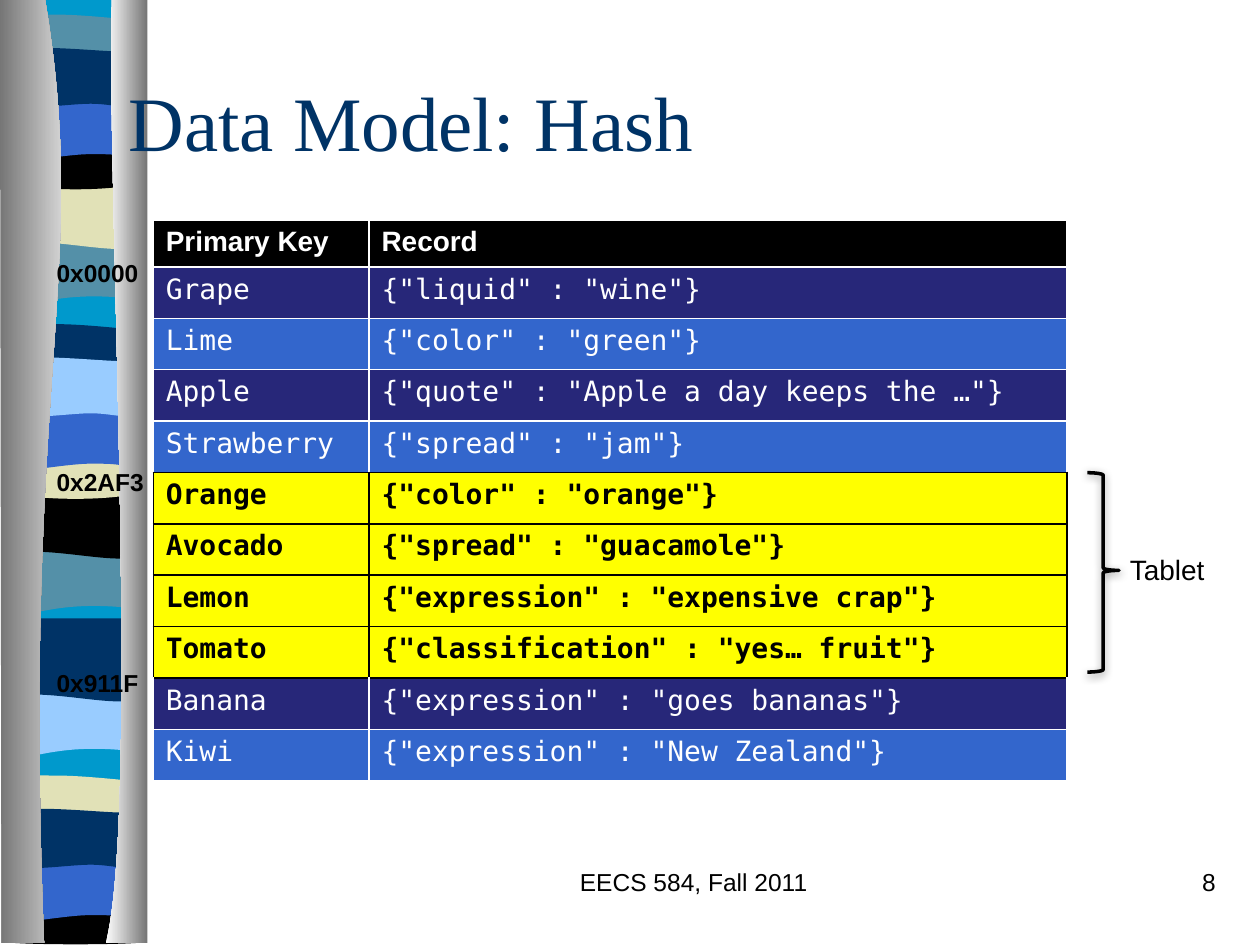
from dataclasses import dataclass

from lxml.etree import SubElement
from pptx import Presentation
from pptx.dml.color import RGBColor
from pptx.enum.shapes import MSO_SHAPE
from pptx.enum.text import MSO_ANCHOR, MSO_AUTO_SIZE, PP_ALIGN
from pptx.oxml.ns import qn
from pptx.util import Cm, Pt


@dataclass(frozen=True)
class Theme:
    navy: str = "003366"
    blue: str = "3366CC"
    sky: str = "99CCFF"
    cyan: str = "0099CC"
    teal: str = "5490A8"
    sand: str = "E1E1B7"
    indigo: str = "272779"
    yellow: str = "FFFF00"
    gray: str = "767676"
    black: str = "000000"
    white: str = "FFFFFF"
    serif: str = "Times New Roman"
    sans: str = "Arial"
    mono: str = "DejaVu Sans Mono"
    title: int = 44
    body: int = 16
    small: int = 14


T = Theme()
SLIDE_W, SLIDE_H = 25.4, 19.05
TABLE_H, HEADER_H = 11.3, 0.94
STRETCH = 1.33  # bands grow about their middle so that they overlap

# Ribbon bands: top in cm, then an outline whose y counts from that top.
# A point is (x, y); six numbers are a Bezier curve from the point before.
BANDS = {
    "slant": (4.7, [(2.9, 0), (2.9, 1.19), (0.99, 0.99, 0.61, 1.4, 0.13, 1.19), (0.13, 0)]),
    "swell": (3.58, [(2.9, 0), (2.9, 1.19), (2.44, 1.4, 0.99, 1.04, 0.14, 1.19), (0.14, 0)]),
    "thin": (0.53, [(2.9, 0), (2.9, 0.61), (2.44, 0.74, 0.61, 0.74, 0.13, 0.61), (0.13, 0),
                    (0.3, -0.13, 0.74, -0.1, 1.19, -0.1), (1.65, -0.1, 2.54, -0.03, 2.9, 0)]),
    "bowl": (2.74, [(2.9, 0), (2.9, 0.81), (2.44, 0.97, 0.61, 0.97, 0.14, 0.81), (0.14, 0),
                    (1.83, 0.13, 2.31, 0, 2.9, 0)]),
    "arch": (1.88, [(2.9, 0), (2.9, 1.19), (2.46, 1.07, 2.29, 1.07, 1.83, 1.07),
                    (1.37, 1.07, 0.56, 1.19, 0.13, 1.19), (0.13, 0)]),
    "wide": (1.17, [(2.9, 0), (2.9, 0.79), (2.72, 0.91, 2.29, 0.79, 1.83, 0.79),
                    (1.37, 0.79, 0.43, 0.91, 0.13, 0.79), (0.13, 0),
                    (0.53, -0.13, 2.01, 0, 2.46, 0), (2.9, 0)]),
}
# The band pattern repeats down the ribbon: offset in cm and band colours
REPEATS = [
    (0, dict(slant=T.teal, swell=T.sand, thin=T.teal, bowl=T.black, arch=T.blue, wide=T.navy)),
    (6.24, dict(slant=T.teal, swell=T.black, thin=T.navy, bowl=T.sand, arch=T.blue, wide=T.sky)),
    (9.12, dict(slant=T.sky, swell=T.navy)),
    (15.34, dict(thin=T.sand, bowl=T.black, arch=T.blue, wide=T.navy)),
]
BACKING = [(2.9, 0), (2.9, 18.97), (0.13, 18.97), (0.13, 0)]
LEFT_EDGE = [(0.91, 0), (1.83, 5.49, 0.43, 7.52, 0.89, 19.02), (0.03, 19.02), (0, 0)]
RIGHT_EDGE = [(2.26, 0), (2.13, 3.18, 2.84, 16.41, 2.13, 19.02), (2.97, 19.02), (2.97, 0)]

RECORDS = [
    ("Primary Key", "Record"),
    ("Grape", '{"liquid" : "wine"}'),
    ("Lime", '{"color" : "green"}'),
    ("Apple", '{"quote" : "Apple a day keeps the …"}'),
    ("Strawberry", '{"spread" : "jam"}'),
    ("Orange", '{"color" : "orange"}'),
    ("Avocado", '{"spread" : "guacamole"}'),
    ("Lemon", '{"expression" : "expensive crap"}'),
    ("Tomato", '{"classification" : "yes… fruit"}'),
    ("Banana", '{"expression" : "goes bananas"}'),
    ("Kiwi", '{"expression" : "New Zealand"}'),
]
TABLET = range(5, 9)
HASHES = [("0x0000", 5.08, 2.16), ("0x911F", 13.34, 2.16), ("0x2AF3", 9.3, 2.3)]


def rgb(color):
    return RGBColor.from_string(color)


def set_text(tf, text, size=T.body, font=T.sans, color=T.black, bold=False,
             align=PP_ALIGN.LEFT):
    p = tf.paragraphs[0]
    p.alignment = align
    r = p.add_run()
    r.text = text
    r.font.size, r.font.name, r.font.bold = Pt(size), font, bold
    r.font.color.rgb = rgb(color)


def add_label(s, text, x, y, w, h, wrap=False, **fmt):
    tf = s.shapes.add_textbox(Cm(x), Cm(y), Cm(w), Cm(h)).text_frame
    tf.word_wrap = wrap
    if not wrap:
        tf.auto_size = MSO_AUTO_SIZE.SHAPE_TO_FIT_TEXT
    set_text(tf, text, **fmt)


def bend_curves(sp, outline):
    """Join each curve's three line segments into one Bezier segment."""
    segments = iter(sp.element.findall(".//" + qn("a:lnTo")))
    for item in outline[1:]:
        first = next(segments)
        if len(item) == 6:
            first.tag = qn("a:cubicBezTo")
            for _ in range(2):
                extra = next(segments)
                first.append(extra[0])
                extra.getparent().remove(extra)


def add_outline(group, outline, colors, top=0, stretch=1):
    """One colour gives a solid fill, two a gradient from left to right."""
    pts = [item[k:k + 2] for item in outline for k in range(0, len(item), 2)]
    ys = [y for _, y in pts]
    mid = (min(ys) + max(ys)) / 2
    pts = [(Cm(x), Cm(min(top + mid + (y - mid) * stretch, SLIDE_H))) for x, y in pts]
    builder = group.shapes.build_freeform(*pts[0])
    builder.add_line_segments(pts[1:])
    sp = builder.convert_to_shape()
    bend_curves(sp, outline)
    sp.shadow.inherit = False
    sp.line.fill.background()
    if len(colors) == 1:
        sp.fill.solid()
        sp.fill.fore_color.rgb = rgb(colors[0])
    else:
        sp.fill.gradient()
        sp.fill.gradient_angle = 0
        for stop, color in zip(sp.fill.gradient_stops, colors):
            stop.color.rgb = rgb(color)


def add_ribbon(s):
    group = s.shapes.add_group_shape()
    add_outline(group, BACKING, [T.cyan])
    for offset, colors in REPEATS:
        for name, color in colors.items():
            top, outline = BANDS[name]
            add_outline(group, outline, [color], offset + top, STRETCH)
    add_outline(group, LEFT_EDGE, [T.gray, T.white])
    add_outline(group, RIGHT_EDGE, [T.white, T.gray])
    s.shapes.element.insert(2, group.element)  # behind the title


def set_borders(cell, **colors):
    tcPr = cell._tc.get_or_add_tcPr()
    for side in "LRTB":
        ln = SubElement(tcPr, qn(f"a:ln{side}"), w=str(Pt(1)))
        fill = SubElement(ln, qn("a:solidFill"))
        SubElement(fill, qn("a:srgbClr"), val=colors.get(side, T.white))


def row_style(i):
    """Fill, text format and border colours of a table row."""
    if i == 0:
        return T.black, dict(color=T.white, bold=True), {}
    if i in TABLET:
        return T.yellow, dict(font=T.mono, bold=True), dict.fromkeys("LRTB", T.black)
    borders = {}
    if i + 1 in TABLET:
        borders["B"] = T.black
    if i - 1 in TABLET:
        borders["T"] = T.black
    return (T.indigo if i % 2 else T.blue), dict(font=T.mono, color=T.white), borders


def add_records(s):
    table = s.shapes.add_table(len(RECORDS), 2, Cm(3.09), Cm(4.44), Cm(18.42), Cm(TABLE_H)).table
    for col, width in zip(table.columns, (4.35, 14.07)):
        col.width = Cm(width)
    row_h = (TABLE_H - HEADER_H) / (len(RECORDS) - 1)
    for i, record in enumerate(RECORDS):
        table.rows[i].height = Cm(row_h if i else HEADER_H)
        fill, fmt, borders = row_style(i)
        for j, text in enumerate(record):
            cell = table.cell(i, j)
            set_borders(cell, **borders)
            cell.fill.solid()
            cell.fill.fore_color.rgb = rgb(fill)
            set_text(cell.text_frame, text, **fmt)


def add_brace(s):
    sp = s.shapes.add_shape(MSO_SHAPE.RIGHT_BRACE, Cm(21.92), Cm(9.53), Cm(0.64), Cm(4.02))
    sp.adjustments[0], sp.adjustments[1] = 0.08, 0.49
    sp.fill.background()
    sp.line.color.rgb = rgb(T.black)
    sp.line.width = Pt(2)
    sp.shadow.inherit = False
    effects = sp.element.spPr.find(qn("a:effectLst"))
    shadow = SubElement(effects, qn("a:outerShdw"), blurRad=str(Pt(5)), dist=str(Pt(1.6)),
                        dir="5400000", rotWithShape="0")
    color = SubElement(shadow, qn("a:srgbClr"), val=T.black)
    SubElement(color, qn("a:alpha"), val="38000")


def add_title(s, text):
    sp = s.shapes.title
    sp.left, sp.top, sp.width, sp.height = Cm(2.34), Cm(0.84), Cm(20.24), Cm(3.18)
    sp.text_frame.vertical_anchor = MSO_ANCHOR.MIDDLE
    set_text(sp.text_frame, text, size=T.title, font=T.serif, color=T.navy)


def main():
    prs = Presentation()
    prs.slide_width, prs.slide_height = Cm(SLIDE_W), Cm(SLIDE_H)
    s = prs.slides.add_slide(prs.slide_layouts[5])

    # Decoration and title
    add_ribbon(s)
    add_title(s, "Data Model: Hash")

    # Footer
    add_label(s, "EECS 584, Fall 2011", 9.96, 17.35, 8.05, 1.27, wrap=True,
              size=T.small, align=PP_ALIGN.CENTER)
    add_label(s, "8", 19.48, 17.35, 5.28, 1.27, wrap=True, size=T.small, align=PP_ALIGN.RIGHT)

    # Records, with one tablet marked
    add_records(s)
    add_brace(s)
    add_label(s, "Tablet", 22.53, 11.02, 2.03, 0.94)

    # Hash boundaries
    for text, y, w in HASHES:
        add_label(s, text, 0.89, y, w, 0.86, size=T.small, bold=True)

    prs.save("out.pptx")


if __name__ == "__main__":
    main()
